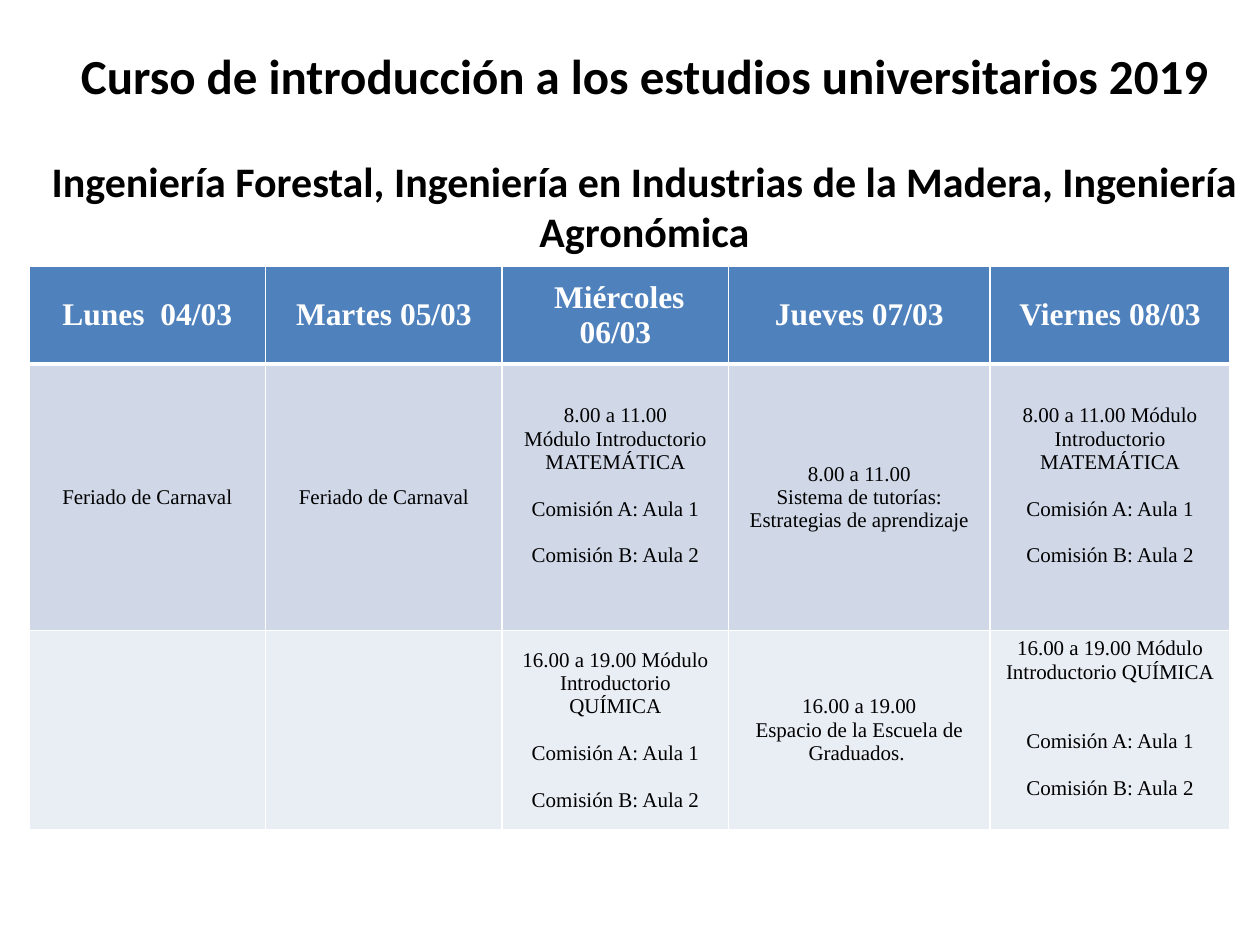
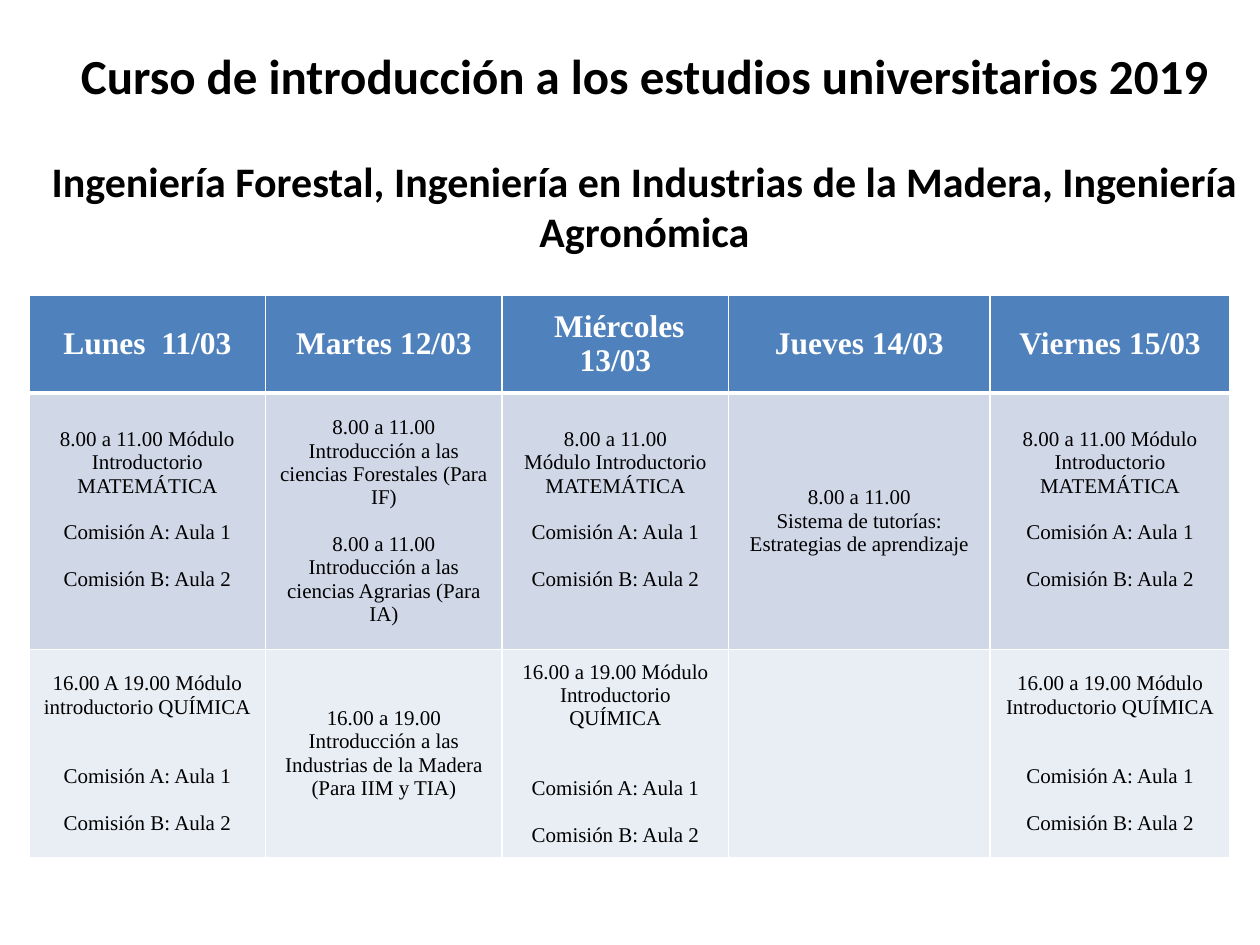
import pptx
import pptx.dml.color
import pptx.enum.text
import pptx.oxml
import pptx.oxml.ns
import pptx.util
from itertools import groupby

Pt = pptx.util.Pt
CENTER = pptx.enum.text.PP_ALIGN.CENTER

COURSE = "Curso de introducción a los estudios universitarios 2019"
DEGREES = "Ingeniería Forestal, Ingeniería en Industrias de la Madera, Ingeniería Agronómica"
DAYS = ["Lunes ", "Martes", " Miércoles", "Jueves", "Viernes"]

ROOMS = "Comisión A: Aula 1\n\nComisión B: Aula 2"
HOLIDAY = "Feriado de Carnaval"
MATHS = f"8.00 a 11.00 Módulo Introductorio MATEMÁTICA\n\n{ROOMS}"
MATHS_SPLIT = f"8.00 a 11.00\nMódulo Introductorio MATEMÁTICA\n\n{ROOMS}"
CHEMISTRY = "16.00 a 19.00 Módulo Introductorio QUÍMICA"
TUTORING = "8.00 a 11.00\nSistema de tutorías: Estrategias de aprendizaje"
GRADUATES = "16.00 a 19.00\nEspacio de la Escuela de Graduados. "
SCIENCES = (
    "8.00 a 11.00 Introducción a las ciencias Forestales (Para IF)\n\n"
    "8.00 a 11.00 Introducción a las ciencias Agrarias (Para IA)"
)
WOOD = "16.00 a 19.00\nIntroducción a las Industrias de la Madera (Para IIM y TIA)"

WEEKS = [
    {
        "top": 152,
        "morning_height": 152.4,
        "dates": ["04/03", "05/03", "06/03", "07/03", "08/03"],
        "morning": [HOLIDAY, HOLIDAY, MATHS_SPLIT + "\n", TUTORING, MATHS + "\n"],
        "afternoon": [
            "",
            "",
            f"{CHEMISTRY}\n\n{ROOMS}",
            GRADUATES,
            f"{CHEMISTRY}\n\n\n{ROOMS}\n",
        ],
    },
    {
        "top": 168.5,
        "morning_height": 146.6,
        "dates": ["11/03", "12/03", "13/03", "14/03", "15/03"],
        "morning": [MATHS + "\n", SCIENCES, MATHS_SPLIT + "\n", TUTORING, MATHS + "\n"],
        "afternoon": [
            f"16.00 A 19.00 Módulo introductorio QUÍMICA\n\n\n{ROOMS}",
            WOOD,
            f"{CHEMISTRY}\n\n\n{ROOMS}",
            "",
            f"{CHEMISTRY}\n\n\n{ROOMS}",
        ],
    },
]


def color(value):
    return pptx.dml.color.RGBColor.from_string(value)


class Timetable:
    WHITE, BLACK = "FFFFFF", "000000"
    HEADER, MORNING, AFTERNOON = "4F81BD", "D0D8E8", "E9EDF4"
    TITLE_FONT, CELL_FONT = "Calibri", "Times New Roman"
    LEFT = 16.6
    COLUMNS = [135.2, 135.2, 129.4, 149.4, 137.2]
    HEADER_HEIGHT, AFTERNOON_HEIGHT = 56, 113.4
    LINE = 13.3
    MARGIN = 3.6

    def __init__(self):
        self.deck = pptx.Presentation()
        self.deck.slide_width, self.deck.slide_height = Pt(720), Pt(540)
        self.slide = None

    def new_slide(self):
        self.slide = self.deck.slides.add_slide(self.deck.slide_layouts[6])

    def run(self, paragraph, text, font, size, ink, bold):
        paragraph.alignment = CENTER
        run = paragraph.add_run()
        run.text = text
        run.font.name = font
        run.font.size = Pt(size)
        run.font.bold = bold
        run.font.color.rgb = color(ink)

    def title(self):
        heading = self.slide.shapes.add_textbox(Pt(self.LEFT), Pt(22.3), Pt(703.4), Pt(128))
        frame = heading.text_frame
        frame.word_wrap = True
        frame.auto_size = pptx.enum.text.MSO_AUTO_SIZE.SHAPE_TO_FIT_TEXT
        self.run(frame.paragraphs[0], COURSE, self.TITLE_FONT, 28, self.BLACK, True)
        degrees = frame.add_paragraph()
        degrees.space_before = Pt(29.3)
        self.run(degrees, DEGREES, self.TITLE_FONT, 24, self.BLACK, True)

    def borders(self, cell, widths):
        properties = cell._tc.get_or_add_tcPr()
        for side, width in zip("LRTB", widths):
            properties.append(pptx.oxml.parse_xml(
                f'<a:ln{side} {pptx.oxml.ns.nsdecls("a")} w="{Pt(width)}">'
                f'<a:solidFill><a:srgbClr val="{self.WHITE}"/></a:solidFill></a:ln{side}>'
            ))

    def cell(self, cell, text, fill, widths, size=12, ink=BLACK, bold=False):
        self.borders(cell, widths)
        cell.fill.solid()
        cell.fill.fore_color.rgb = color(fill)
        cell.vertical_anchor = pptx.enum.text.MSO_ANCHOR.MIDDLE
        paragraph, gap = cell.text_frame.paragraphs[0], 0
        for blank, lines in groupby(text.split("\n"), key=lambda line: not line):
            lines = list(lines)
            if blank:
                gap = len(lines) * self.LINE
                continue
            for line in lines:
                if paragraph.runs:
                    paragraph = cell.text_frame.add_paragraph()
                    paragraph.space_before = Pt(gap)
                self.run(paragraph, line, self.CELL_FONT, size, ink, bold)
                gap = 0
        cell.margin_bottom = Pt(self.MARGIN + (gap if text else 0))

    def week(self, week):
        heights = [self.HEADER_HEIGHT, week["morning_height"], self.AFTERNOON_HEIGHT]
        table = self.slide.shapes.add_table(
            3, 5, Pt(self.LEFT), Pt(week["top"]), Pt(sum(self.COLUMNS)), Pt(sum(heights))
        ).table
        table.first_row = table.horz_banding = False
        for column, width in zip(table.columns, self.COLUMNS):
            column.width = Pt(width)
        for row, height in zip(table.rows, heights):
            row.height = Pt(height)
        for index, (day, date) in enumerate(zip(DAYS, week["dates"])):
            self.cell(table.cell(0, index), f"{day} {date}", self.HEADER, (1, 1, 1, 3),
                      18, self.WHITE, True)
            self.cell(table.cell(1, index), week["morning"][index], self.MORNING, (1, 1, 3, 1))
            self.cell(table.cell(2, index), week["afternoon"][index], self.AFTERNOON, (1, 1, 1, 1))


def main():
    timetable = Timetable()
    for week in WEEKS:
        timetable.new_slide()
        timetable.week(week)
        timetable.title()
    timetable.deck.save("out.pptx")


if __name__ == "__main__":
    main()
